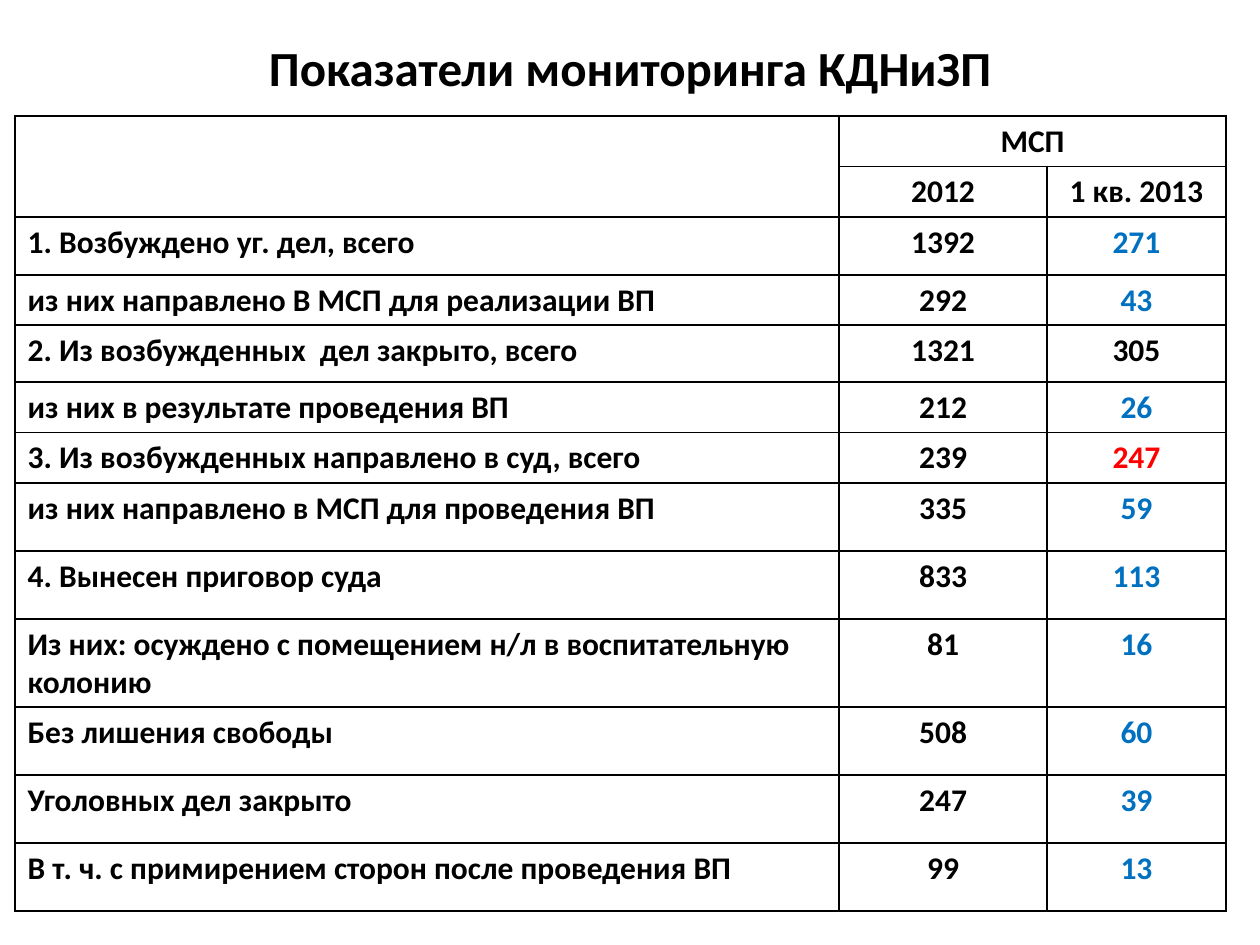
"""Builds the slide with the monitoring indicators of the juvenile commission."""
from dataclasses import dataclass

from lxml import etree
from pptx import Presentation
from pptx import util as u
from pptx.dml import color
from pptx.enum import text
from pptx.oxml import ns


@dataclass(frozen=True)
class Theme:
    font: str = "Calibri"
    title_size: int = 28
    cell_size: int = 18
    rule_width: float = 1
    ink: str = "000000"
    current: str = "0070C0"
    alert: str = "FF0000"


class Deck:
    def __init__(self, theme, width, height):
        self.theme = theme
        self.prs = Presentation()
        self.prs.slide_width, self.prs.slide_height = u.Inches(width), u.Inches(height)
        self.slide = self.prs.slides.add_slide(self.prs.slide_layouts[6])

    def across(self, share):
        return round(self.prs.slide_width * share)

    def down(self, share):
        return round(self.prs.slide_height * share)

    def add_words(self, frame, words, size, ink, align):
        paragraph = frame.paragraphs[0]
        paragraph.alignment = align
        run = paragraph.add_run()
        run.text = words
        run.font.name, run.font.size, run.font.bold = self.theme.font, u.Pt(size), True
        run.font.color.rgb = color.RGBColor.from_string(ink)

    def title(self, words, height):
        box = self.slide.shapes.add_textbox(0, 0, self.across(1), self.down(height))
        frame = box.text_frame
        frame.word_wrap = True
        frame.vertical_anchor = text.MSO_ANCHOR.MIDDLE
        self.add_words(frame, words, self.theme.title_size, self.theme.ink, text.PP_ALIGN.CENTER)

    def table(self, left, top, columns, rows):
        table = self.slide.shapes.add_table(
            len(rows), len(columns), self.across(left), self.down(top),
            self.across(sum(columns)), self.down(sum(rows))).table
        table.first_row = table.horz_banding = False
        for column, share in zip(table.columns, columns):
            column.width = self.across(share)
        for row, share in zip(table.rows, rows):
            row.height = self.down(share)
            for cell in row.cells:
                cell.fill.background()
                self.rule(cell)
        return table

    def rule(self, cell):
        properties = cell._tc.get_or_add_tcPr()
        for place, side in enumerate(("lnL", "lnR", "lnT", "lnB")):
            line = etree.Element(ns.qn(f"a:{side}"), w=str(u.Pt(self.theme.rule_width)))
            fill = etree.SubElement(line, ns.qn("a:solidFill"))
            etree.SubElement(fill, ns.qn("a:srgbClr"), val=self.theme.ink)
            properties.insert(place, line)

    def cell(self, cell, words, ink=None, align=text.PP_ALIGN.CENTER):
        self.add_words(cell.text_frame, words, self.theme.cell_size, ink or self.theme.ink, align)


def main():
    theme = Theme()
    indicators = [
        ("1. Возбуждено уг. дел, всего", 1392, 271, theme.current),
        ("из них направлено В МСП для реализации ВП", 292, 43, theme.current),
        ("2. Из возбужденных  дел закрыто, всего", 1321, 305, theme.ink),
        ("из них в результате проведения ВП", 212, 26, theme.current),
        ("3. Из возбужденных направлено в суд, всего", 239, 247, theme.alert),
        ("из них направлено в МСП для проведения ВП", 335, 59, theme.current),
        ("4. Вынесен приговор суда", 833, 113, theme.current),
        ("Из них: осуждено с помещением н/л в воспитательную колонию", 81, 16, theme.current),
        ("Без лишения свободы", 508, 60, theme.current),
        ("Уголовных дел закрыто", 247, 39, theme.current),
        ("В т. ч. с примирением сторон после проведения ВП", 99, 13, theme.current),
    ]
    width, height = 10, 7.5
    columns = [inches / width for inches in (6.54, 1.65, 1.42)]
    rows = [inches / height for inches in
            [0.31, 0.39, 0.46, 0.37, 0.45, 0.39, 0.39] + [0.54] * 6]

    deck = Deck(theme, width, height)
    deck.title("Показатели мониторинга КДНиЗП", 1.07 / height)
    table = deck.table(0.12 / width, 0.92 / height, columns, rows)
    table.cell(0, 0).merge(table.cell(1, 0))
    table.cell(0, 1).merge(table.cell(0, 2))
    deck.cell(table.cell(0, 1), "МСП")
    for column, period in enumerate(("2012", "1 кв. 2013"), start=1):
        deck.cell(table.cell(1, column), period)
    for row, (indicator, year, quarter, ink) in enumerate(indicators, start=2):
        deck.cell(table.cell(row, 0), indicator, align=text.PP_ALIGN.LEFT)
        deck.cell(table.cell(row, 1), str(year))
        deck.cell(table.cell(row, 2), str(quarter), ink)
    deck.prs.save("out.pptx")


if __name__ == "__main__":
    main()
